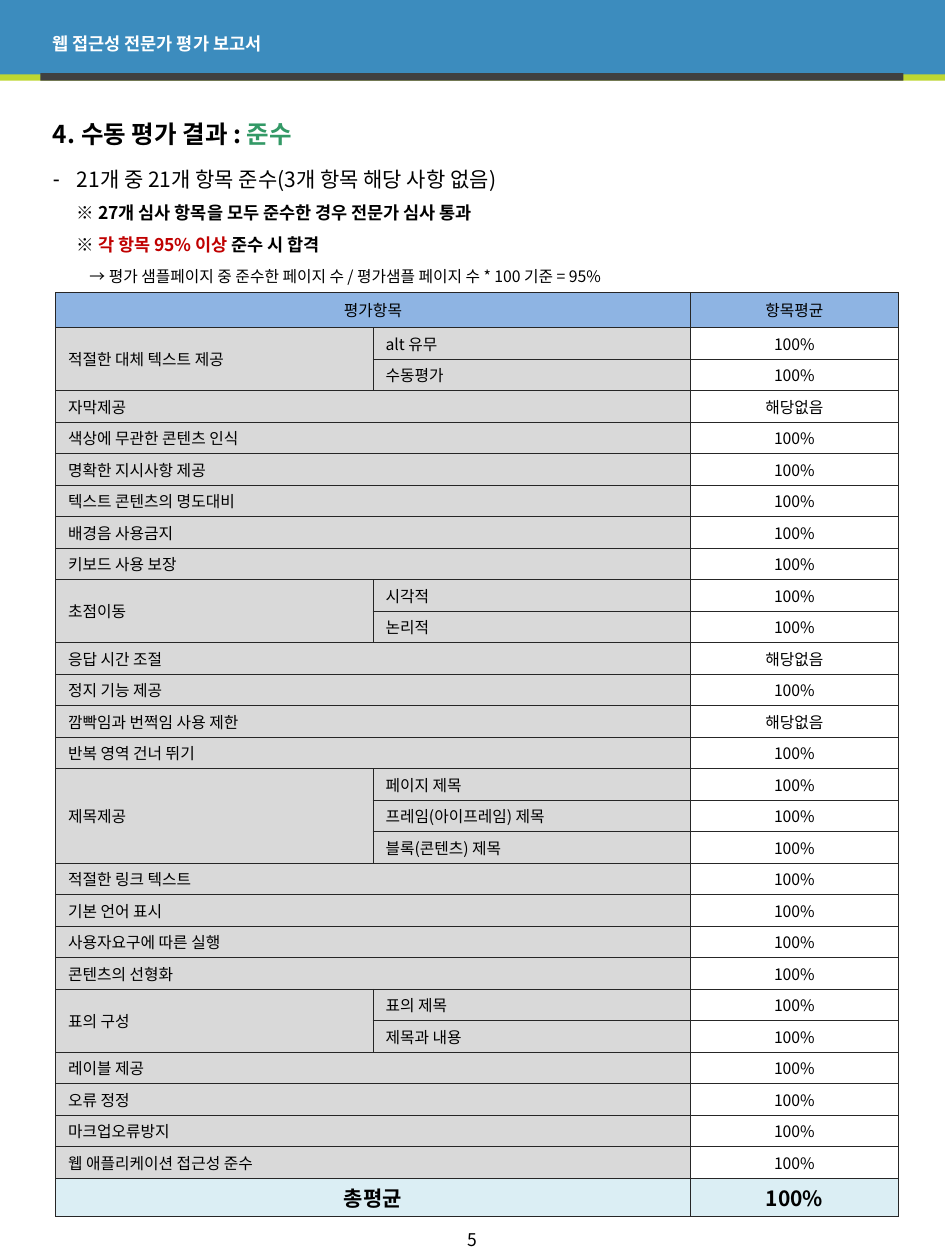
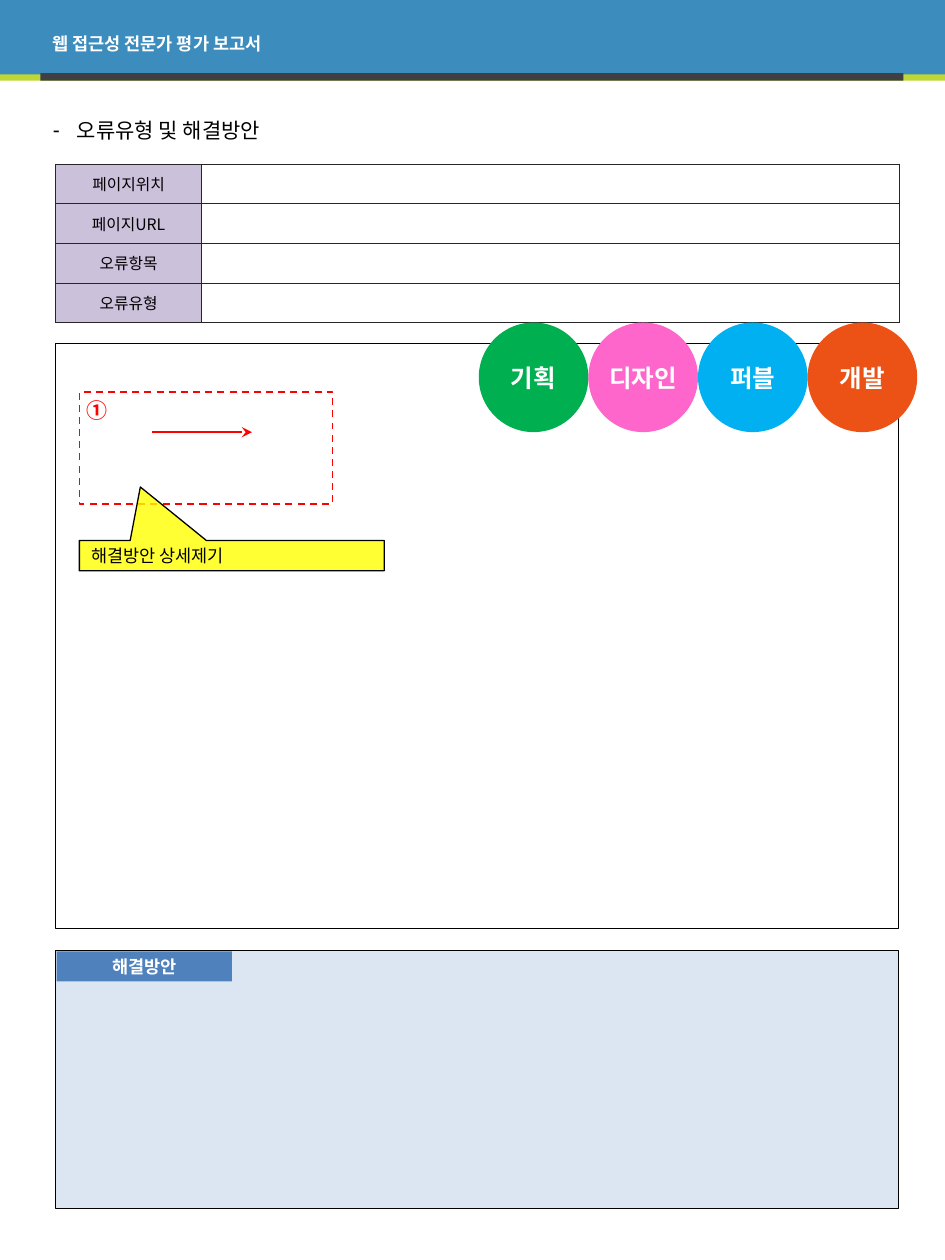
from lxml import etree
from pptx import Presentation
from pptx import util as u
from pptx.dml import color
from pptx.enum import dml, shapes, text
from pptx.oxml import ns

FONT = "Noto Sans CJK KR"
LEFT, MID = text.PP_ALIGN.LEFT, text.PP_ALIGN.CENTER
RECT = shapes.MSO_SHAPE.RECTANGLE
OVAL = shapes.MSO_SHAPE.OVAL
TAG = shapes.MSO_SHAPE.RECTANGULAR_CALLOUT
BLACK, WHITE, RED = "000000", "FFFFFF", "FF0000"
GREY, PALE, EDGE = "D9D9D9", "DBEEF4", "262626"

NONE = "해당없음"
ITEMS = [
    ("적절한 대체 텍스트 제공", "alt 유무", "수동평가"),
    ("자막제공",),
    ("색상에 무관한 콘텐츠 인식",),
    ("명확한 지시사항 제공",),
    ("텍스트 콘텐츠의 명도대비",),
    ("배경음 사용금지",),
    ("키보드 사용 보장",),
    ("초점이동", "시각적", "논리적"),
    ("응답 시간 조절",),
    ("정지 기능 제공",),
    ("깜빡임과 번쩍임 사용 제한",),
    ("반복 영역 건너 뛰기",),
    ("제목제공", "페이지 제목", "프레임(아이프레임) 제목", "블록(콘텐츠) 제목"),
    ("적절한 링크 텍스트",),
    ("기본 언어 표시",),
    ("사용자요구에 따른 실행",),
    ("콘텐츠의 선형화",),
    ("표의 구성", "표의 제목", "제목과 내용"),
    ("레이블 제공",),
    ("오류 정정",),
    ("마크업오류방지",),
    ("웹 애플리케이션 접근성 준수",),
]
SKIPS = {"자막제공", "응답 시간 조절", "깜빡임과 번쩍임 사용 제한"}


def px(n):
    return u.Emu(n * 9144)


def rgb(code):
    return color.RGBColor.from_string(code)


def sub(node, name, **attrs):
    kid = etree.SubElement(node, ns.qn("a:" + name))
    for key, val in attrs.items():
        kid.set(key, str(val))
    return kid


class Deck:
    def __init__(self, wide, high):
        self.prs = Presentation()
        self.prs.slide_width, self.prs.slide_height = px(wide), px(high)
        self.base = self.prs.slide_layouts[1]
        self.slide = None

    def page(self):
        self.slide = self.prs.slides.add_slide(self.base)

    def share(self, forms):
        for num, form in enumerate(forms, 20):
            form.element.nvSpPr.cNvPr.set("id", str(num))
            self.base.shapes.element.append(form.element)

    def style(self, run, size, hue=BLACK, bold=False):
        run.font.size = u.Pt(size)
        run.font.bold = bold
        run.font.color.rgb = rgb(hue)
        run.font.name = FONT
        sub(run.font._element, "ea", typeface=FONT)

    def put(self, para, runs, align=LEFT):
        para.alignment = align
        for words, *look in runs:
            run = para.add_run()
            run.text = words
            self.style(run, *look)

    def frame(self, form, box):
        form.left, form.top, form.width, form.height = map(px, box)
        body = form.text_frame
        body.word_wrap = True
        body.auto_size = text.MSO_AUTO_SIZE.NONE
        return body

    def title(self, box, runs):
        body = self.frame(self.slide.shapes.title, box)
        body.vertical_anchor = text.MSO_ANCHOR.MIDDLE
        self.put(body.paragraphs[0], runs)

    def list(self, box, rows):
        body = self.frame(self.slide.placeholders[1], box)
        for num, (mark, inset, runs) in enumerate(rows):
            para = body.add_paragraph() if num else body.paragraphs[0]
            para.line_spacing = u.Pt(18)
            para.space_before = para.space_after = u.Pt(0)
            prop = para._p.get_or_add_pPr()
            prop.set("marL", str(px(inset)))
            prop.set("indent", str(px(-inset if mark else 0)))
            if mark:
                sub(prop, "buChar", char=mark)
            else:
                sub(prop, "buNone")
            self.put(para, runs)

    def label(self, box, runs, align=LEFT, anchor=text.MSO_ANCHOR.MIDDLE):
        form = self.slide.shapes.add_textbox(0, 0, 0, 0)
        body = self.frame(form, box)
        body.vertical_anchor = anchor
        self.put(body.paragraphs[0], runs, align)
        return form

    def shape(self, kind, box, fill=None, line=None, width=0.25, runs=(),
              align=MID, inset=10):
        form = self.slide.shapes.add_shape(kind, *map(px, box))
        form.shadow.inherit = False
        if fill:
            form.fill.solid()
            form.fill.fore_color.rgb = rgb(fill)
        else:
            form.fill.background()
        if line:
            form.line.color.rgb = rgb(line)
            form.line.width = u.Pt(width)
        else:
            form.line.fill.background()
        if runs:
            body = form.text_frame
            body.word_wrap = True
            body.vertical_anchor = text.MSO_ANCHOR.MIDDLE
            body.margin_left = body.margin_right = px(inset)
            self.put(body.paragraphs[0], runs, align)
        return form

    def arrow(self, left, top, right, low, hue, width):
        link = self.slide.shapes.add_connector(
            shapes.MSO_CONNECTOR.STRAIGHT, *map(px, (left, top, right, low)))
        link.line.color.rgb = rgb(hue)
        link.line.width = u.Pt(width)
        sub(link.line._get_or_add_ln(), "tailEnd", type="stealth")
        sub(link.element.spPr, "effectLst")

    def cell(self, cell, words, fill, align=LEFT, size=9, bold=False):
        prop = cell._tc.get_or_add_tcPr()
        for side in ("lnL", "lnR", "lnT", "lnB"):
            edge = sub(prop, side, w=u.Pt(0.25))
            sub(sub(edge, "solidFill"), "srgbClr", val=EDGE)
        cell.fill.solid()
        cell.fill.fore_color.rgb = rgb(fill)
        cell.vertical_anchor = text.MSO_ANCHOR.MIDDLE
        cell.margin_top = cell.margin_bottom = px(3)
        para = cell.text_frame.paragraphs[0]
        if words:
            self.put(para, [(words, size, BLACK, bold)], align)
        else:
            sub(para._p, "endParaRPr", sz=size * 100)

    def table(self, box, count, cols):
        grid = self.slide.shapes.add_table(count, len(cols), *map(px, box)).table
        grid.first_row = grid.horz_banding = False
        for col, wide in zip(grid.columns, cols):
            col.width = px(wide)
        return grid


def bands(deck):
    deck.share([
        deck.shape(RECT, (0, 58, 750, 6), "BED732"),
        deck.shape(RECT, (0, 0, 750, 59), "3C8CBE"),
        deck.shape(RECT, (32, 58, 685, 6), "404040"),
        deck.label((32, 11, 685, 47),
                   [("웹 접근성 전문가 평가 보고서", 10, WHITE, True)]),
    ])


def scores(deck):
    rows = [("평가항목", "", "항목평균", "8EB4E3", "8EB4E3", MID, 9, False)]
    spans = [(0, 0, 0, 1)]
    for name, *parts in ITEMS:
        top = len(rows)
        mark = NONE if name in SKIPS else "100%"
        for num, part in enumerate(parts or [""]):
            rows.append((name if num == 0 else "", part, mark,
                         GREY, WHITE, LEFT, 9, False))
        spans.append((top, 0, len(rows) - 1, 0) if parts else (top, 0, top, 1))
    spans.append((len(rows), 0, len(rows), 1))
    rows.append(("총평균", "", "100%", PALE, PALE, MID, 12, True))

    grid = deck.table((44, 232, 669, 733), len(rows), (252, 252, 165))
    for num, (name, part, mark, fill, tint, align, size, bold) in enumerate(rows):
        grid.rows[num].height = px(25)
        deck.cell(grid.cell(num, 0), name, fill, align, size, bold)
        deck.cell(grid.cell(num, 1), part, fill, align, size, bold)
        deck.cell(grid.cell(num, 2), mark, tint, MID, size, bold)
    grid.rows[0].height = px(28)
    grid.rows[len(rows) - 1].height = px(30)
    for top, left, low, right in spans:
        grid.cell(top, left).merge(grid.cell(low, right))


def results(deck):
    deck.title((32, 83, 685, 47), [("4. 수동 평가 결과 : ", 14, BLACK, True),
                                   ("준수", 14, "339966", True)])
    deck.list((32, 122, 685, 111), [
        ("-", 19, [("21개 중 21개 항목 준수(3개 항목 해당 사항 없음)", 12)]),
        ("", 19, [("※ 27개 심사 항목을 모두 준수한 경우 전문가 심사 통과",
                   10, BLACK, True)]),
        ("", 19, [("※ ", 10, BLACK, True),
                  ("각 항목 95% 이상 ", 10, "C00000", True),
                  ("준수 시 합격", 10, BLACK, True)]),
        ("", 29, [("→ 평가 샘플페이지 중 준수한 페이지 수 / "
                   "평가샘플 페이지 수 * 100 기준 = 95%", 9)]),
    ])
    scores(deck)
    deck.label((0, 965, 750, 37), [("5", 10)], MID)


def errors(deck):
    title = deck.slide.shapes.title.element
    title.getparent().remove(title)
    deck.shape(RECT, (44, 272, 669, 465), WHITE, BLACK)
    heads = ("페이지위치", "페이지URL", "오류항목", "오류유형")
    grid = deck.table((44, 130, 670, 126), len(heads), (116, 554))
    for num, head in enumerate(heads):
        deck.cell(grid.cell(num, 0), head, "CCC1DA", MID)
        deck.cell(grid.cell(num, 1), "", WHITE)
    deck.list((32, 83, 685, 33), [("-", 19, [("오류유형 및 해결방안", 12)])])
    deck.shape(RECT, (44, 754, 669, 205), "DCE6F2", BLACK)
    roles = (("기획", "00B050"), ("디자인", "FF66CC"),
             ("퍼블", "00B0F0"), ("개발", "EC5115"))
    for num, (role, hue) in enumerate(roles):
        deck.shape(OVAL, (380 + 87 * num, 256, 87, 87), hue,
                   runs=[(role, 14, WHITE, True)], inset=0)
    deck.label((59, 311, 24, 30), [("①", 12, RED, True)],
               anchor=text.MSO_ANCHOR.TOP)
    zone = deck.shape(RECT, (63, 311, 201, 89), None, RED, 1)
    zone.line.dash_style = dml.MSO_LINE.DASH
    deck.shape(RECT, (45, 755, 139, 24), "4F81BD",
               runs=[("해결방안", 10, WHITE, True)])
    deck.arrow(121, 343, 200, 343, RED, 1.5)
    note = deck.shape(TAG, (63, 429, 242, 24), "FFFF00", BLACK, 0.75,
                      [("해결방안 상세제기", 10)], LEFT)
    note.adjustments[0], note.adjustments[1] = -0.3, -2.27
    tint = note.element.spPr.find(ns.qn("a:solidFill"))[0]
    sub(tint, "alpha", val=80000)


def main():
    deck = Deck(750, 1000)
    deck.page()
    bands(deck)
    results(deck)
    deck.page()
    errors(deck)
    deck.prs.save("out.pptx")


if __name__ == "__main__":
    main()
